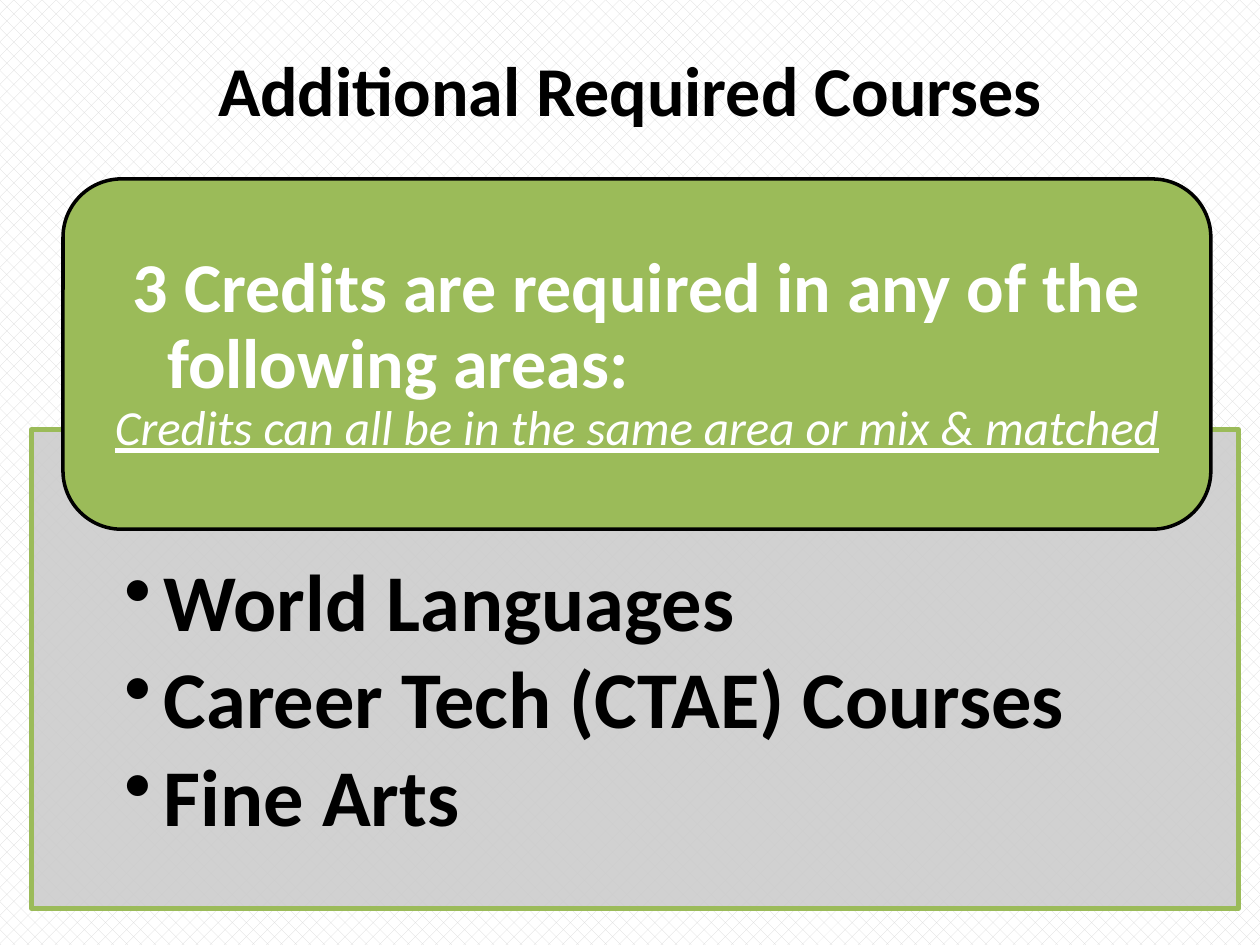
"""Build the slide on additional required courses."""
import pptx
import pptx.util
import pptx.dml.color
import pptx.enum.dml
import pptx.enum.shapes
import pptx.enum.text
import pptx.oxml.ns
import lxml.etree

Inches = pptx.util.Inches
Pt = pptx.util.Pt
ALIGN = pptx.enum.text.PP_ALIGN
ANCHOR = pptx.enum.text.MSO_ANCHOR
SHAPE = pptx.enum.shapes.MSO_SHAPE
GREEN = "9BBB59"


def color(value):
    """Turn a hex string into a colour."""
    return pptx.dml.color.RGBColor.from_string(value)


def write(para, text, size=40, fill="000000", bold=True, italic=False,
          align=ALIGN.LEFT, spacing=0.9, after=0, margin=0, indent=0, bullet=None):
    """Write one formatted paragraph."""
    para.alignment = align
    para.line_spacing = spacing
    para.space_before = Pt(0)
    para.space_after = Pt(after)
    properties = para._p.get_or_add_pPr()
    properties.set("marL", str(Inches(margin)))
    properties.set("indent", str(Inches(indent)))
    if bullet:
        mark = lxml.etree.SubElement(properties, pptx.oxml.ns.qn("a:buChar"))
        mark.set("char", bullet)
    span = para.add_run()
    span.text = text
    span.font.name = "Calibri"
    span.font.size = Pt(size)
    span.font.bold = bold
    span.font.italic = italic
    span.font.underline = italic
    span.font.color.rgb = color(fill)


deck = pptx.Presentation()
deck.slide_width = Inches(10)
deck.slide_height = Inches(7.5)
page = deck.slides.add_slide(deck.slide_layouts[6])
background = page.background.fill
background.patterned()
background.pattern = pptx.enum.dml.MSO_PATTERN.PERCENT_25
background.fore_color.rgb = color("D9D9D9")
background.back_color.rgb = color("FFFFFF")

title = page.shapes.add_textbox(Inches(0.5), Inches(0.08), Inches(9), Inches(1.25))
title.text_frame.word_wrap = True
title.text_frame.vertical_anchor = ANCHOR.MIDDLE
write(title.text_frame.paragraphs[0], "Additional Required Courses",
      align=ALIGN.CENTER, spacing=1.0)

boxes = []
for kind, place, fill, line, width, anchor, insets in [
    (SHAPE.RECTANGLE, (0.25, 3.41, 9.58, 3.8), "CCCCCC", GREEN, 3,
     ANCHOR.TOP, (0.74, 1.05, 0.74, 0.36)),
    (SHAPE.ROUNDED_RECTANGLE, (0.5, 1.42, 9.11, 2.78), GREEN, "000000", 2,
     ANCHOR.MIDDLE, (0.25, 0, 0.25, 0)),
]:
    box = page.shapes.add_shape(kind, *map(Inches, place))
    box.shadow.inherit = False
    box.fill.solid()
    box.fill.fore_color.rgb = color(fill)
    box.line.color.rgb = color(line)
    box.line.width = Pt(width)
    frame = box.text_frame
    frame.word_wrap = True
    frame.vertical_anchor = anchor
    (frame.margin_left, frame.margin_top,
     frame.margin_right, frame.margin_bottom) = map(Inches, insets)
    boxes.append(box)
areas, rule = boxes

tint = areas._element.spPr.find(pptx.oxml.ns.qn("a:solidFill"))[0]
lxml.etree.SubElement(tint, pptx.oxml.ns.qn("a:alpha")).set("val", "90000")

courses = ["World Languages", "Career Tech (CTAE) Courses", "Fine Arts"]
for index, course in enumerate(courses):
    frame = areas.text_frame
    para = frame.add_paragraph() if index else frame.paragraphs[0]
    write(para, course, size=46, after=6, margin=0.31, indent=-0.31, bullet="•")

write(rule.text_frame.paragraphs[0],
      "3 Credits are required in any of the following areas:",
      fill="FFFFFF", margin=0.44, indent=-0.27)
write(rule.text_frame.add_paragraph(),
      "Credits can all be in the same area or mix & matched",
      size=28, fill="FFFFFF", bold=False, italic=True, align=ALIGN.CENTER)

deck.save("out.pptx")
